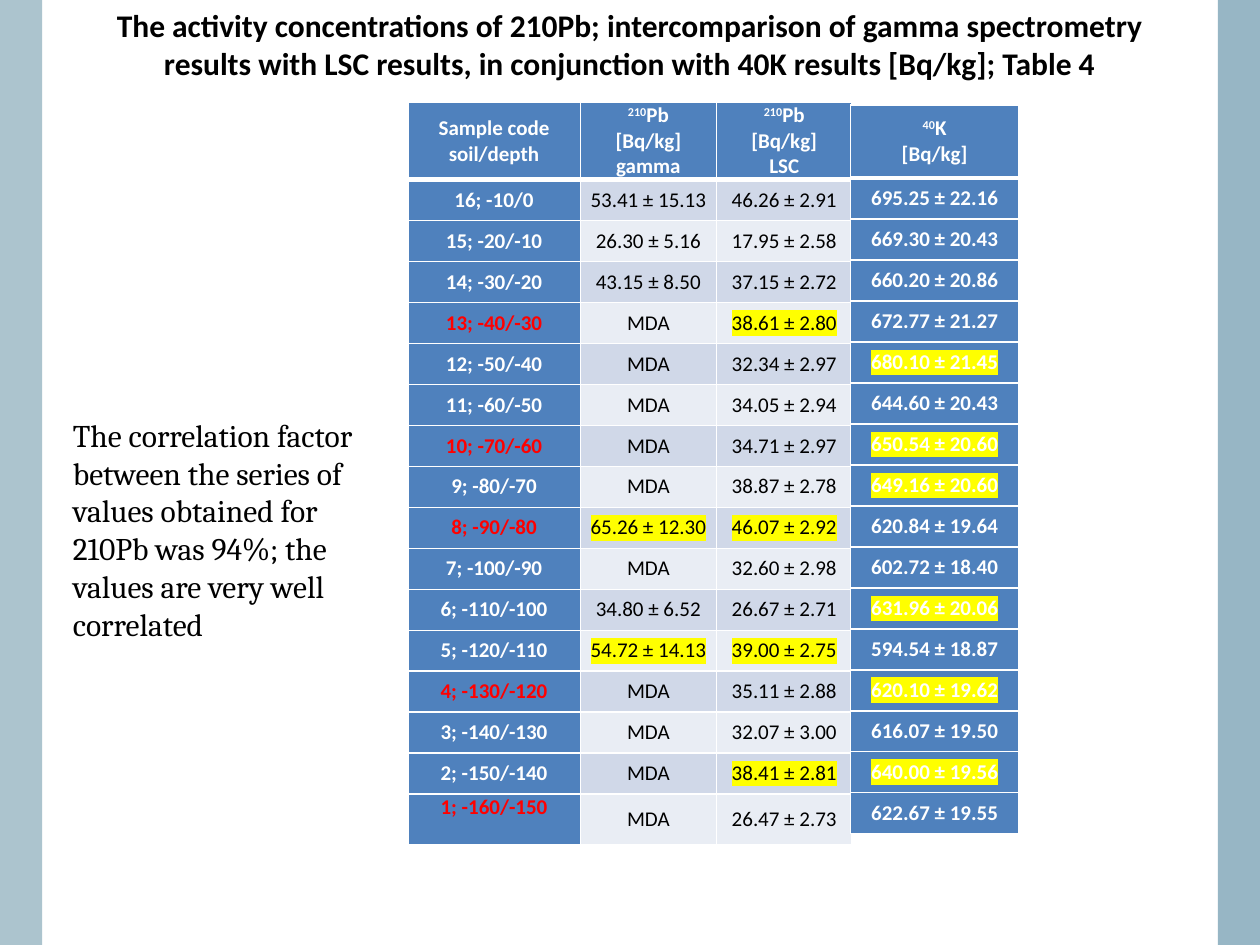
from dataclasses import dataclass

from lxml import etree
from pptx import Presentation
from pptx import util as u
from pptx.dml.color import RGBColor
from pptx.enum import shapes, text
from pptx.oxml import ns


@dataclass(frozen=True)
class Theme:
    heading_font: str = "Calibri"
    body_font: str = "Cambria"
    large: int = 18
    small: int = 12
    black: str = "000000"
    white: str = "FFFFFF"
    red: str = "FF0000"
    yellow: str = "FFFF00"
    header: str = "4F81BD"
    bands: tuple = ("D0D8E8", "E9EDF4")
    left_edge: str = "ACC4CE"
    right_edge: str = "97B6C5"


TITLE = ("The activity concentrations of 210Pb; intercomparison of gamma spectrometry "
         "results with LSC results, in conjunction with 40K results [Bq/kg]; Table 4")
COMMENT = ["The correlation factor", "between the series of",
           "values obtained for 210Pb was 94%; the values are very well correlated"]

# Text between carets is superscript.
LEAD_HEADERS = [["Sample code soil/depth"], ["^210^Pb", "[Bq/kg] gamma"],
                ["^210^Pb", "[Bq/kg]", "LSC"]]
POTASSIUM_HEADERS = [["^40^K", "[Bq/kg]"]]

# Sample code, 210Pb gamma, 210Pb LSC, 40K
SAMPLES = [
    ("16; -10/0", "53.41 ± 15.13", "46.26 ± 2.91", "695.25 ± 22.16"),
    ("15; -20/-10", "26.30 ± 5.16", "17.95 ± 2.58", "669.30 ± 20.43"),
    ("14; -30/-20", "43.15 ± 8.50", "37.15 ± 2.72", "660.20 ± 20.86"),
    ("13; -40/-30", "MDA", "38.61 ± 2.80", "672.77 ± 21.27"),
    ("12; -50/-40", "MDA", "32.34 ± 2.97", "680.10 ± 21.45"),
    ("11; -60/-50", "MDA", "34.05 ± 2.94", "644.60 ± 20.43"),
    ("10; -70/-60", "MDA", "34.71 ± 2.97", "650.54 ± 20.60"),
    ("9; -80/-70", "MDA", "38.87 ± 2.78", "649.16 ± 20.60"),
    ("8; -90/-80", "65.26 ± 12.30", "46.07 ± 2.92", "620.84 ± 19.64"),
    ("7; -100/-90", "MDA", "32.60 ± 2.98", "602.72 ± 18.40"),
    ("6; -110/-100", "34.80 ± 6.52", "26.67 ± 2.71", "631.96 ± 20.06"),
    ("5; -120/-110", "54.72 ± 14.13", "39.00 ± 2.75", "594.54 ± 18.87"),
    ("4; -130/-120", "MDA", "35.11 ± 2.88", "620.10 ± 19.62"),
    ("3; -140/-130", "MDA", "32.07 ± 3.00", "616.07 ± 19.50"),
    ("2; -150/-140", "MDA", "38.41 ± 2.81", "640.00 ± 19.56"),
    ("1; -160/-150", "MDA", "26.47 ± 2.73", "622.67 ± 19.55"),
]
RED_SAMPLES = {"13", "10", "8", "4", "1"}
HIGHLIGHTED = {"65.26 ± 12.30", "54.72 ± 14.13",
               "38.61 ± 2.80", "46.07 ± 2.92", "39.00 ± 2.75", "38.41 ± 2.81",
               "680.10 ± 21.45", "650.54 ± 20.60", "649.16 ± 20.60",
               "631.96 ± 20.06", "620.10 ± 19.62", "640.00 ± 19.56"}
ROW_HEIGHT = 12.4 / 15


def set_attributes(target, **values):
    for name, value in values.items():
        setattr(target, name, value)


class SlideBuilder:
    def __init__(self, presentation, theme):
        self.theme = theme
        self.slide = presentation.slides.add_slide(presentation.slide_layouts[5])

    def fill_text(self, frame, paragraphs, font, size, color, bold=False,
                  align=text.PP_ALIGN.LEFT, highlight=None):
        """Fill a text frame; text between carets becomes superscript."""
        for index, content in enumerate(paragraphs):
            paragraph = frame.add_paragraph() if index else frame.paragraphs[0]
            paragraph.alignment = align
            for part, piece in enumerate(content.split("^")):
                if not piece:
                    continue
                run = paragraph.add_run()
                run.text = piece
                set_attributes(run.font, name=font, size=u.Pt(size), bold=bold)
                run.font.color.rgb = RGBColor.from_string(color)
                properties = run._r.get_or_add_rPr()
                if part % 2:
                    properties.set("baseline", "30000")
                if highlight:
                    marker = etree.Element(ns.qn("a:highlight"))
                    etree.SubElement(marker, ns.qn("a:srgbClr"), val=highlight)
                    properties.find(ns.qn("a:solidFill")).addnext(marker)

    def title(self, content, left, top, width, height):
        title = self.slide.shapes.title
        set_attributes(title, left=u.Cm(left), top=u.Cm(top),
                       width=u.Cm(width), height=u.Cm(height))
        set_attributes(title.text_frame, word_wrap=True, auto_size=text.MSO_AUTO_SIZE.NONE,
                       vertical_anchor=text.MSO_ANCHOR.MIDDLE)
        self.fill_text(title.text_frame, [content], self.theme.heading_font,
                       self.theme.large, self.theme.black, True, text.PP_ALIGN.CENTER)

    def band(self, color, left, top, width, height):
        shape = self.slide.shapes.add_shape(
            shapes.MSO_SHAPE.RECTANGLE, *map(u.Cm, (left, top, width, height)))
        shape.shadow.inherit = False
        shape.fill.solid()
        shape.fill.fore_color.rgb = RGBColor.from_string(color)
        shape.line.fill.background()

    def text_box(self, paragraphs, left, top, width, height):
        box = self.slide.shapes.add_textbox(*map(u.Cm, (left, top, width, height)))
        box.text_frame.word_wrap = True
        self.fill_text(box.text_frame, paragraphs, self.theme.body_font,
                       self.theme.large, self.theme.black)

    def borders(self, cell, bottom):
        properties = cell._tc.get_or_add_tcPr()
        for side, points in (("L", 1), ("R", 1), ("T", 1), ("B", bottom)):
            line = etree.SubElement(properties, ns.qn(f"a:ln{side}"), w=str(int(u.Pt(points))))
            fill = etree.SubElement(line, ns.qn("a:solidFill"))
            etree.SubElement(fill, ns.qn("a:srgbClr"), val=self.theme.white)

    def cell(self, cell, paragraphs, fill, color, bold, header=False):
        self.borders(cell, 3 if header else 1)
        set_attributes(cell, vertical_anchor=text.MSO_ANCHOR.MIDDLE,
                       margin_left=u.Cm(0.18), margin_right=u.Cm(0.18),
                       margin_top=0, margin_bottom=0)
        cell.fill.solid()
        cell.fill.fore_color.rgb = RGBColor.from_string(fill)
        highlight = self.theme.yellow if paragraphs[0] in HIGHLIGHTED else None
        self.fill_text(cell.text_frame, paragraphs, self.theme.heading_font,
                       self.theme.small, color, bold, text.PP_ALIGN.CENTER, highlight)

    def table(self, headers, rows, left, top, widths, heights):
        """Add a table whose header row and first column are emphasised."""
        theme = self.theme
        table = self.slide.shapes.add_table(
            len(heights), len(widths),
            *map(u.Cm, (left, top, sum(widths), sum(heights)))).table
        for column, width in zip(table.columns, widths):
            column.width = u.Cm(width)
        for row, height in zip(table.rows, heights):
            row.height = u.Cm(height)
        for column, header in enumerate(headers):
            self.cell(table.cell(0, column), header, theme.header, theme.white, True, True)
        for row, values in enumerate(rows, 1):
            for column, value in enumerate(values):
                if column:
                    fill, color = theme.bands[(row - 1) % 2], theme.black
                else:
                    is_red = value.split(";")[0] in RED_SAMPLES
                    fill, color = theme.header, theme.red if is_red else theme.white
                self.cell(table.cell(row, column), [value], fill, color, column == 0)
        return table


def main():
    theme = Theme()
    presentation = Presentation()
    set_attributes(presentation, slide_width=u.Cm(25.4), slide_height=u.Cm(19.05))
    builder = SlideBuilder(presentation, theme)
    builder.band(theme.left_edge, 0, 0, 0.85, 19.05)
    builder.band(theme.right_edge, 24.55, 0, 0.85, 19.05)
    builder.title(TITLE, 1.27, 0, 22.86, 1.78)

    lead = builder.table(LEAD_HEADERS, [sample[:3] for sample in SAMPLES],
                         8.22, 2.07, [3.48, 2.74, 2.74],
                         [1.54] + [ROW_HEIGHT] * 15 + [1.02])
    lead.cell(len(SAMPLES), 0).vertical_anchor = text.MSO_ANCHOR.TOP
    builder.text_box(COMMENT, 1.22, 8.26, 7.01, 4.88)
    builder.table(POTASSIUM_HEADERS, [sample[3:] for sample in SAMPLES],
                  17.15, 2.12, [3.38], [1.47] + [ROW_HEIGHT] * 16)
    presentation.save("out.pptx")


if __name__ == "__main__":
    main()
